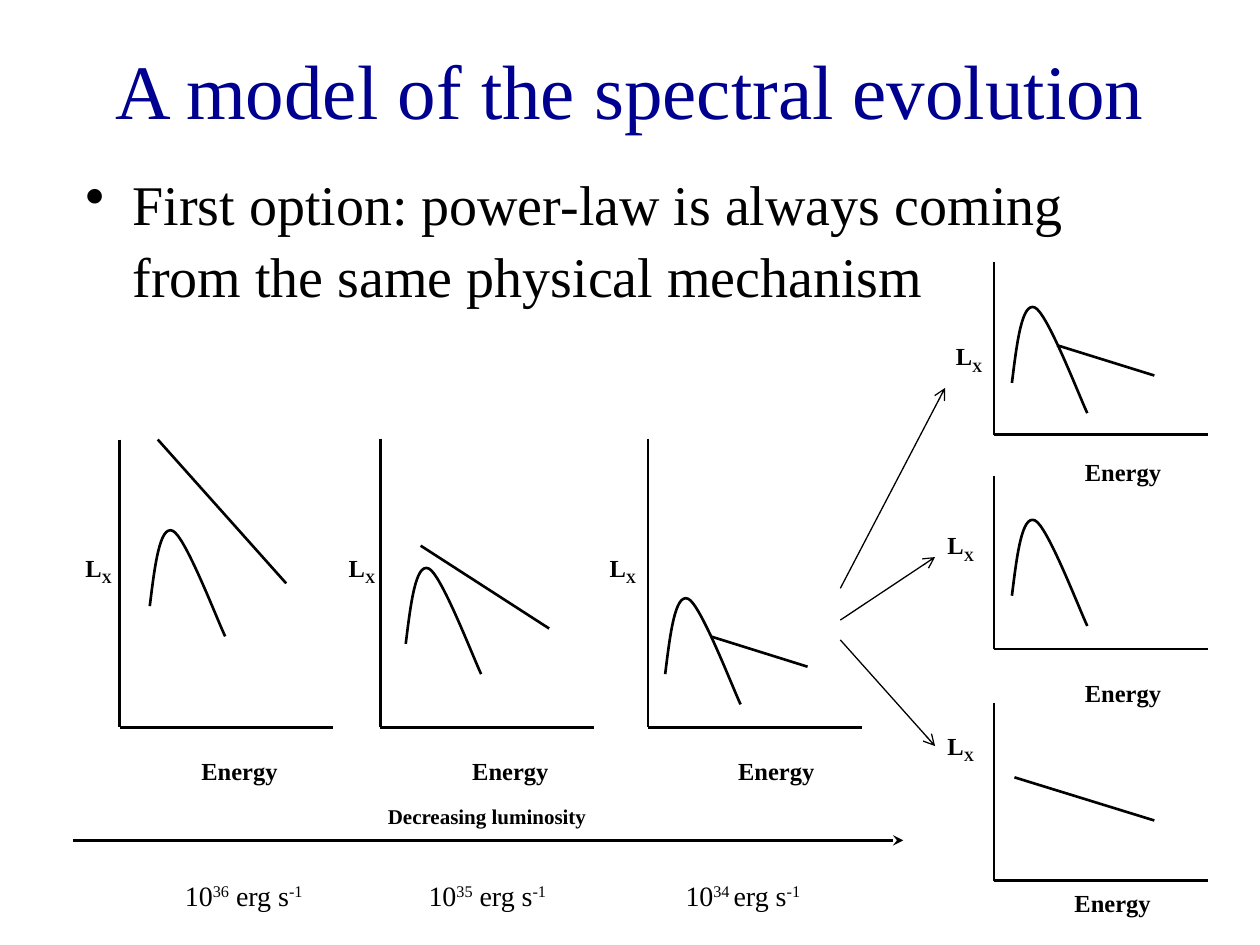
"""Build a slide on the spectral evolution of an X-ray source with luminosity."""
from lxml import etree
from pptx import Presentation
from pptx.dml.color import RGBColor
from pptx.enum.text import MSO_ANCHOR, PP_ALIGN
from pptx.oxml.ns import qn
from pptx.util import Cm, Pt

MIDDLE = MSO_ANCHOR.MIDDLE
CENTER = PP_ALIGN.CENTER
LEFT = PP_ALIGN.LEFT
FONT = "Times New Roman"
COLORS = {"title": "000090", "ink": "000000"}

deck = Presentation()
deck.slide_width, deck.slide_height = Cm(25.4), Cm(19.05)
page = deck.slides.add_slide(deck.slide_layouts[6])


def add_text(place, spans, size, bold=False, color="ink", wrap=False):
    box = page.shapes.add_textbox(*(Cm(value) for value in place))
    box.text_frame.word_wrap = wrap
    paragraph = box.text_frame.paragraphs[0]
    paragraph.alignment = LEFT
    for text, baseline in spans:
        span = paragraph.add_run()
        span.text = text
        span.font.name = FONT
        span.font.size = Pt(size)
        span.font.bold = bold
        span.font.color.rgb = RGBColor.from_string(COLORS[color])
        if baseline:
            span._r.get_or_add_rPr().set("baseline", str(baseline * 1000))
    return box


def add_line(start, end, width=1.5, arrow=None):
    line = page.shapes.add_connector(1, *(Cm(value) for value in start + end))
    line.line.color.rgb = RGBColor.from_string(COLORS["ink"])
    line.line.width = Pt(width)
    if arrow:
        etree.SubElement(line.line._get_or_add_ln(), qn("a:tailEnd"), type=arrow)
    etree.SubElement(line._element.spPr, qn("a:effectLst"))


title = add_text((1.91, 0.2, 21.59, 3.18), [("A model of the spectral evolution", 0)],
                 44, color="title", wrap=True)
title.text_frame.vertical_anchor = MIDDLE
title.text_frame.paragraphs[0].alignment = CENTER

option = add_text(
    (1.47, 3.22, 21.59, 11.43),
    [("First option: power-law is always coming from the same physical mechanism", 0)],
    32, wrap=True)
option_paragraph = option.text_frame.paragraphs[0]
option_paragraph.line_spacing = 1.06
bullet_props = option_paragraph._p.get_or_add_pPr()
bullet_props.set("marL", str(Cm(0.95)))
bullet_props.set("indent", str(Cm(-0.95)))
etree.SubElement(bullet_props, qn("a:buChar"), char="•")

AXIS_LENGTH = 4.31
BUMP = [(0.1, -0.81), (0.2, -1.63), (0.46, -1.52),
        (0.71, -1.42), (1.35, 0.25), (1.52, 0.61)]

# axis x, top, bottom, flux label, energy label, bump start, power law ends
panels = [
    (2.41, 8.86, 14.66, (1.47, 11.02), (3.81, 15.11), (3.02, 12.22),
     ((3.18, 8.86), (5.77, 11.76))),
    (7.67, 8.84, 14.66, (6.78, 11.02), (9.27, 15.11), (8.18, 12.98),
     ((8.48, 11.0), (11.07, 12.67))),
    (13.06, 8.84, 14.66, (12.04, 11.02), (14.63, 15.11), (13.41, 13.59),
     ((14.33, 12.83), (16.28, 13.44))),
    (20.04, 5.28, 8.76, (19.02, 6.76), (21.62, 9.09), (20.4, 7.72),
     ((21.31, 6.96), (23.27, 7.57))),
    (20.04, 9.6, 13.08, (18.85, 10.57), (21.62, 13.54), (20.4, 12.01), None),
    (20.04, 14.17, 17.75, (18.85, 14.61), (21.41, 17.78), None,
     ((20.45, 15.67), (23.27, 16.54))),
]

for axis_x, top, bottom, flux, energy, bump, power_law in panels:
    add_line((axis_x, top), (axis_x, bottom))
    add_line((axis_x, bottom), (axis_x + AXIS_LENGTH, bottom))
    add_text(flux + (1.09, 0.86), [("L", 0), ("X", -25)], 14, bold=True)
    add_text(energy + (2.08, 0.84), [("Energy", 0)], 14, bold=True)
    if bump:
        builder = page.shapes.build_freeform(Cm(bump[0]), Cm(bump[1]))
        builder.add_line_segments(
            [(Cm(bump[0] + dx), Cm(bump[1] + dy)) for dx, dy in BUMP], close=False)
        curve = builder.convert_to_shape()
        curve.shadow.inherit = False
        curve.fill.background()
        curve.line.color.rgb = RGBColor.from_string(COLORS["ink"])
        curve.line.width = Pt(1.5)
        outline = next(curve._element.iter(qn("a:path")))
        segments = outline.findall(qn("a:lnTo"))
        for first in range(0, len(segments), 3):
            bezier = etree.SubElement(outline, qn("a:cubicBezTo"))
            for segment in segments[first:first + 3]:
                bezier.append(segment[0])
                outline.remove(segment)
    if power_law:
        add_line(*power_law)

for start, end in [((16.94, 11.86), (19.05, 7.82)),
                   ((16.94, 12.5), (18.85, 11.23)),
                   ((16.94, 12.9), (18.85, 15.04))]:
    add_line(start, end, 0.75, "arrow")

add_line((1.47, 16.94), (18.21, 16.94), 2, "stealth")
add_text((7.57, 16.08, 4.7, 0.76), [("Decreasing luminosity", 0)], 12, bold=True)

luminosities = add_text(
    (3.48, 17.58, 13.36, 0.94),
    [("10", 0), ("36", 30), (" erg s", 0), ("-1", 30),
     ("\t10", 0), ("35", 30), (" erg s", 0), ("-1", 30),
     ("\t10", 0), ("34 ", 30), ("erg s", 0), ("-1", 30)],
    16, wrap=True)
tab_props = luminosities.text_frame.paragraphs[0]._p.get_or_add_pPr()
tab_list = etree.SubElement(tab_props, qn("a:tabLst"))
for position in (4.91, 10.09):
    etree.SubElement(tab_list, qn("a:tab"), pos=str(Cm(position)), algn="l")

deck.save("out.pptx")
